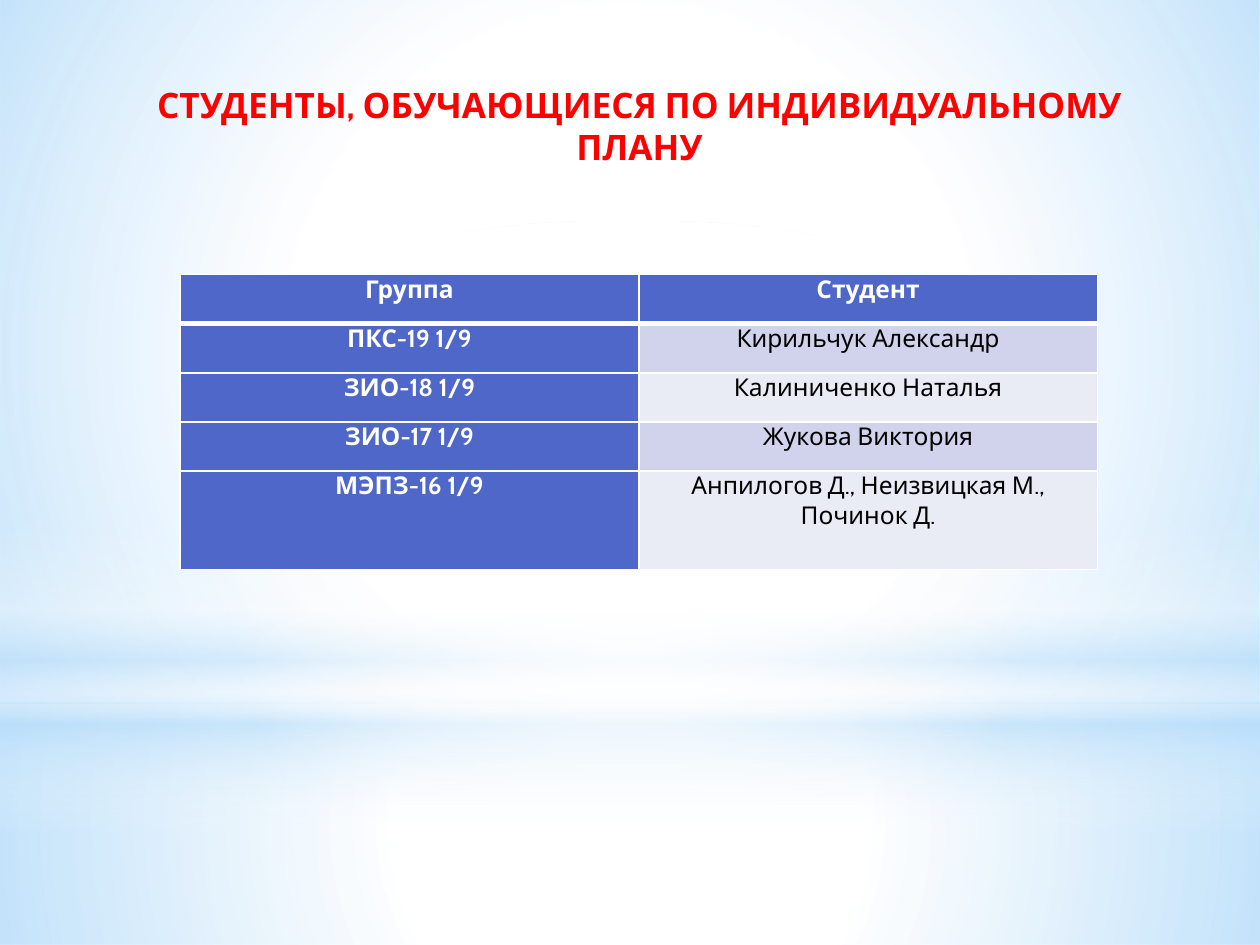
from lxml import etree
from pptx import Presentation, util as u
from pptx.dml.color import RGBColor
from pptx.enum import shapes, text
from pptx.oxml.ns import qn

hues = {"white": "FFFFFF", "sky": "B4DCFA", "blue": "4E67C8", "red": "FF0000",
        "black": "000000", "dark": "D0D3EB", "light": "E9EBF5"}


def shade(shape, stops, angle=None):
    shape.fill.gradient()
    grad = shape._element.spPr.find(qn("a:gradFill"))
    for old in list(grad):
        grad.remove(old)
    group = etree.SubElement(grad, qn("a:gsLst"))
    for place, hue, alpha in stops:
        stop = etree.SubElement(group, qn("a:gs"), pos=str(place * 1000))
        tint = etree.SubElement(stop, qn("a:srgbClr"), val=hues[hue])
        etree.SubElement(tint, qn("a:alpha"), val=str(alpha * 1000))
    if angle is not None:
        etree.SubElement(grad, qn("a:lin"), ang=str(angle * 60000), scaled="0")
    else:
        way = etree.SubElement(grad, qn("a:path"), path="circle")
        etree.SubElement(way, qn("a:fillToRect"), l="50000", t="50000", r="50000", b="50000")


def write(frame, words, size, hue, bold):
    para = frame.paragraphs[0]
    para.alignment = text.PP_ALIGN.CENTER
    run = para.add_run()
    run.text = words
    run.font.name = "Cabin"
    run.font.size = u.Pt(size)
    run.font.bold = bold
    run.font.color.rgb = RGBColor.from_string(hues[hue])


deck = Presentation()
deck.slide_width, deck.slide_height = u.Inches(10), u.Inches(7.5)
slide = deck.slides.add_slide(deck.slide_layouts[6])

kinds = shapes.MSO_SHAPE
layers = [
    (kinds.RECTANGLE, 5.58, 1.92,
     [(0, "white", 91), (37, "white", 76), (100, "sky", 79)], None),
    (kinds.RECTANGLE, 0, 5.58,
     [(0, "white", 89), (48, "white", 62), (100, "sky", 79)], None),
    (kinds.RECTANGLE, 4.12, 2.5,
     [(0, "white", 0), (29, "white", 30), (45, "sky", 40),
      (55, "white", 26), (65, "sky", 60), (100, "white", 0)], 90),
    (kinds.OVAL, 1.75, 5.58, [(0, "white", 100), (56, "white", 0)], None),
]
for kind, top, height, stops, angle in layers:
    layer = slide.shapes.add_shape(kind, 0, u.Inches(top), u.Inches(10), u.Inches(height))
    layer.shadow.inherit = False
    layer.line.fill.background()
    shade(layer, stops, angle)

rows = [
    ("Группа", "Студент"),
    ("ПКС-19 1/9", "Кирильчук Александр"),
    ("ЗИО-18 1/9", "Калиниченко Наталья"),
    ("ЗИО-17 1/9", "Жукова Виктория"),
    ("МЭПЗ-16 1/9", "Анпилогов Д., Неизвицкая М., Починок Д."),
]
table = slide.shapes.add_table(len(rows), 2, u.Inches(1.43), u.Inches(2.18),
                               u.Inches(7.28), u.Inches(2.34)).table
for col in table.columns:
    col.width = u.Inches(3.64)
for i, row in enumerate(rows):
    table.rows[i].height = u.Inches(0.78 if i == len(rows) - 1 else 0.39)
    for j, words in enumerate(row):
        cell = table.cell(i, j)
        cell.margin_left = cell.margin_right = u.Inches(0.08)
        cell.margin_top = cell.margin_bottom = 0
        props = cell._tc.get_or_add_tcPr()
        for side in "LRTB":
            thick = (i, side) in ((0, "B"), (1, "T"))
            edge = etree.SubElement(props, qn("a:ln" + side), w=str(u.Pt(3 if thick else 1)))
            fill = etree.SubElement(edge, qn("a:solidFill"))
            etree.SubElement(fill, qn("a:srgbClr"), val=hues["white"])
        head = i == 0 or j == 0
        hue = "blue" if head else ("dark" if i % 2 else "light")
        cell.fill.solid()
        cell.fill.fore_color.rgb = RGBColor.from_string(hues[hue])
        write(cell.text_frame, words, 14, "white" if head else "black", head)

title = slide.shapes.add_textbox(u.Inches(0.98), u.Inches(0.61), u.Inches(8.19), u.Inches(1.08))
title.text_frame.word_wrap = True
write(title.text_frame, "СТУДЕНТЫ, ОБУЧАЮЩИЕСЯ ПО ИНДИВИДУАЛЬНОМУ ПЛАНУ", 20, "red", True)

deck.save("out.pptx")
